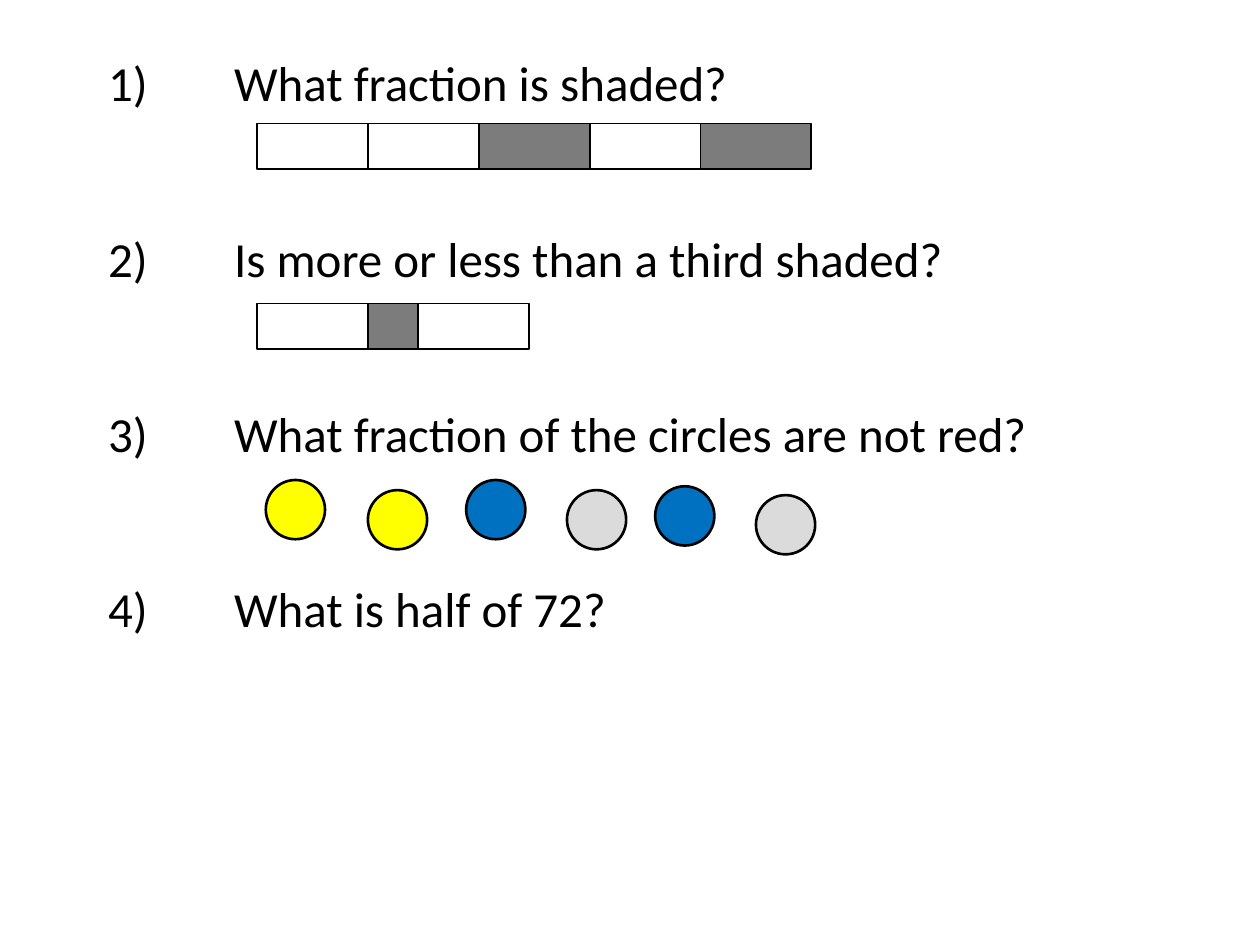
from lxml import etree
from pptx import Presentation
from pptx.dml.color import RGBColor
from pptx.enum import shapes, text
from pptx.oxml.ns import qn
from pptx.util import Inches, Pt

THEME = {
    "font": "Calibri",
    "size": Pt(28),
    "ink": RGBColor.from_string("000000"),
    "shaded": RGBColor.from_string("7C7C7C"),
    "yellow": RGBColor.from_string("FFFF00"),
    "blue": RGBColor.from_string("0070C0"),
    "grey": RGBColor.from_string("DBDBDB"),
}

deck = Presentation()
deck.slide_width = Inches(10)
deck.slide_height = Inches(7.5)
slide = deck.slides.add_slide(deck.slide_layouts[6])


def add_figure(kind, left, top, width, height, fill, line_width):
    figure = slide.shapes.add_shape(
        kind, Inches(left), Inches(top), Inches(width), Inches(height))
    figure.shadow.inherit = False
    if fill:
        figure.fill.solid()
        figure.fill.fore_color.rgb = THEME[fill]
    else:
        figure.fill.background()
    figure.line.color.rgb = THEME["ink"]
    figure.line.width = Pt(line_width)


questions = [
    "What fraction is shaded?",
    "Is more or less than a third shaded?",
    "What fraction of the circles are not red?",
    "What is half of 72?",
]
question_list = slide.shapes.add_textbox(
    Inches(0.76), Inches(0.37), Inches(8.2), Inches(4.81)).text_frame
question_list.word_wrap = True
question_list.auto_size = text.MSO_AUTO_SIZE.SHAPE_TO_FIT_TEXT
for number, question in enumerate(questions, 1):
    if number == 1:
        paragraph = question_list.paragraphs[0]
    else:
        paragraph = question_list.add_paragraph()
        paragraph.space_before = Pt(66.6)
    tabs = etree.SubElement(paragraph._p.get_or_add_pPr(), qn("a:tabLst"))
    for stop in (0.5, 1):
        etree.SubElement(tabs, qn("a:tab"), pos=str(Inches(stop)), algn="l")
    run = paragraph.add_run()
    run.text = f"{number})\t\t{question}"
    run.font.name = THEME["font"]
    run.font.size = THEME["size"]
    run.font.color.rgb = THEME["ink"]

part_width = 0.88
fraction_bars = [
    (0.98, [(part_width, None), (part_width, None), (part_width, "shaded"),
            (part_width, None), (part_width, "shaded")]),
    (2.41, [(part_width, None), (0.4, "shaded"), (part_width, None)]),
]
for top, parts in fraction_bars:
    left = 2.04
    for width, fill in parts:
        add_figure(shapes.MSO_SHAPE.RECTANGLE, left, top, width, 0.36, fill, 1)
        left += width

circles = [
    (2.11, 3.81, "yellow"),
    (2.92, 3.89, "yellow"),
    (3.7, 3.81, "blue"),
    (4.5, 3.89, "grey"),
    (5.2, 3.86, "blue"),
    (6, 3.93, "grey"),
]
for left, top, fill in circles:
    add_figure(shapes.MSO_SHAPE.OVAL, left, top, 0.47, 0.47, fill, 1.5)

deck.save("out.pptx")
